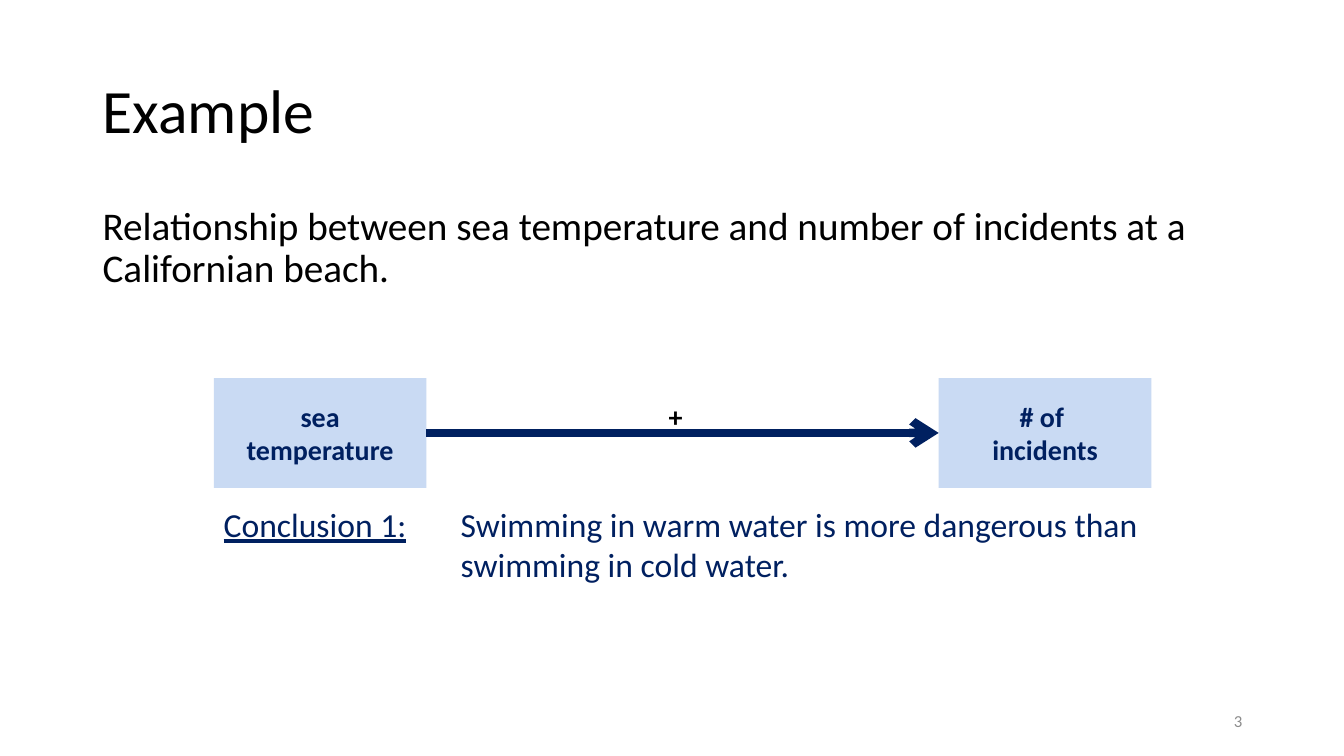
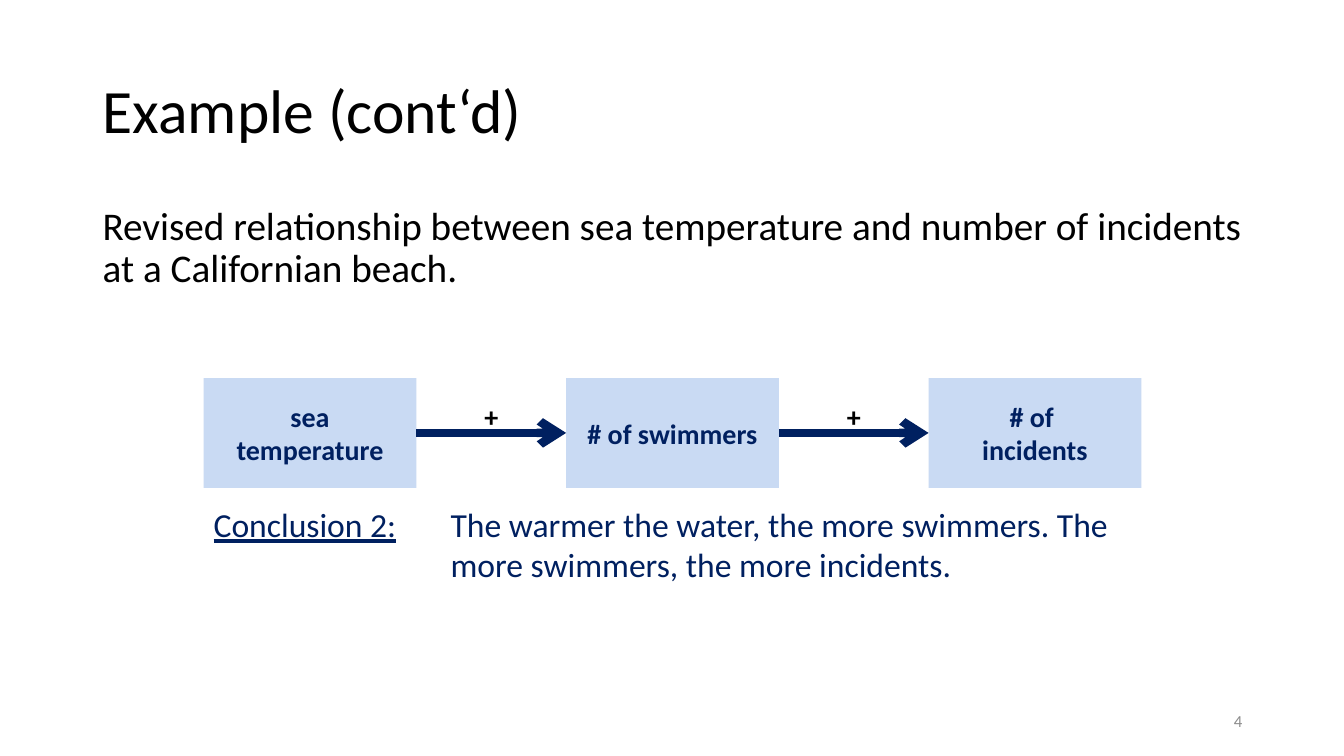
from dataclasses import dataclass
from typing import Any

from lxml import etree
from pptx import Presentation
from pptx.dml.color import RGBColor
from pptx.enum.shapes import MSO_CONNECTOR, MSO_SHAPE
from pptx.enum.text import MSO_ANCHOR, PP_ALIGN
from pptx.oxml.ns import qn
from pptx.slide import Slide
from pptx.text.text import TextFrame
from pptx.util import Inches, Pt

BLACK = RGBColor(0x00, 0x00, 0x00)
NAVY = RGBColor(0x00, 0x20, 0x60)
PALE_BLUE = RGBColor(0xC9, 0xDA, 0xF3)
GREY = RGBColor(0x8C, 0x8C, 0x8C)

BOX_TOP, BOX_WIDTH, BOX_HEIGHT = 3.75, 2.11, 1.09
CHAIN_SPAN = 7.19
SIGN_TOP, SIGN_WIDTH, SIGN_HEIGHT = 3.91, 1.02, 0.44
CONCLUSION_INDENT = 2.35


@dataclass(frozen=True)
class TextStyle:
    font: dict[str, Any]
    color: RGBColor
    paragraph: dict[str, Any]
    anchor: MSO_ANCHOR = MSO_ANCHOR.TOP


@dataclass(frozen=True)
class Area:
    left: float
    top: float
    width: float
    height: float

    def lengths(self) -> list[int]:
        return [Inches(value) for value in (self.left, self.top, self.width, self.height)]


@dataclass(frozen=True)
class Example:
    title: str
    introduction: str
    number: str
    chain_left: float
    factors: tuple[str, ...]
    conclusion_label: str
    conclusion: str
    sign_shift: float = 0


TITLE = TextStyle({"size": Pt(44)}, BLACK, {"line_spacing": 0.9}, MSO_ANCHOR.MIDDLE)
BODY = TextStyle({"size": Pt(28)}, BLACK, {"line_spacing": 0.9, "space_before": Pt(10)})
NUMBER = TextStyle({"size": Pt(12)}, GREY, {"alignment": PP_ALIGN.RIGHT}, MSO_ANCHOR.MIDDLE)
FACTOR = TextStyle({"size": Pt(20), "bold": True}, NAVY,
                   {"alignment": PP_ALIGN.CENTER}, MSO_ANCHOR.MIDDLE)
SIGN = TextStyle({"size": Pt(20), "bold": True}, BLACK, {"alignment": PP_ALIGN.CENTER})
CONCLUSION = TextStyle({"size": Pt(24)}, NAVY, {})

TITLE_AREA = Area(0.92, 0.4, 11.5, 1.45)
BODY_AREA = Area(0.92, 2, 11.5, 4.76)
NUMBER_AREA = Area(9.42, 6.95, 3, 0.4)

EXAMPLES = (
    Example(
        "Example",
        "Relationship between sea temperature and number of incidents at a Californian beach.",
        "3",
        2.12,
        ("sea\ntemperature", "# of \nincidents"),
        "Conclusion 1:",
        "Swimming in warm water is more dangerous than swimming in cold water.",
        -0.07,
    ),
    Example(
        "Example (cont‘d)",
        "Revised relationship between sea temperature and number of incidents "
        "at a Californian beach.",
        "4",
        2.02,
        ("sea\ntemperature", "# of swimmers", "# of \nincidents"),
        "Conclusion 2:",
        "The warmer the water, the more swimmers. The more swimmers, the more incidents.",
    ),
)


def set_values(target: Any, values: dict[str, Any]) -> None:
    for name, value in values.items():
        setattr(target, name, value)


def write_text(frame: TextFrame, text: str, style: TextStyle) -> None:
    set_values(frame, {"word_wrap": True, "vertical_anchor": style.anchor})
    paragraph = frame.paragraphs[0]
    paragraph.text = text
    set_values(paragraph, style.paragraph)
    for run in paragraph.runs:
        set_values(run.font, {"name": "Calibri", **style.font})
        run.font.color.rgb = style.color


def add_text(slide: Slide, area: Area, text: str, style: TextStyle) -> TextFrame:
    frame = slide.shapes.add_textbox(*area.lengths()).text_frame
    write_text(frame, text, style)
    return frame


def add_factor(slide: Slide, left: float, text: str) -> None:
    area = Area(left, BOX_TOP, BOX_WIDTH, BOX_HEIGHT)
    shape = slide.shapes.add_shape(MSO_SHAPE.RECTANGLE, *area.lengths())
    shape.shadow.inherit = False
    shape.fill.solid()
    shape.fill.fore_color.rgb = PALE_BLUE
    shape.line.fill.background()
    write_text(shape.text_frame, text, FACTOR)


def add_arrow(slide: Slide, start: float, end: float) -> None:
    middle = Inches(BOX_TOP + BOX_HEIGHT / 2)
    connector = slide.shapes.add_connector(
        MSO_CONNECTOR.STRAIGHT, Inches(start), middle, Inches(end), middle)
    connector.line.width = Pt(6)
    connector.line.color.rgb = NAVY
    properties = connector.element.spPr
    etree.SubElement(properties.find(qn("a:ln")), qn("a:tailEnd"), type="arrow")
    etree.SubElement(properties, qn("a:effectLst"))


def add_chain(slide: Slide, example: Example) -> None:
    pitch = CHAIN_SPAN / (len(example.factors) - 1)
    for index, factor in enumerate(example.factors):
        left = example.chain_left + index * pitch
        add_factor(slide, left, factor)
        if index:
            start = left - pitch + BOX_WIDTH
            add_arrow(slide, start, left)
            sign_left = (start + left - SIGN_WIDTH) / 2 + example.sign_shift
            add_text(slide, Area(sign_left, SIGN_TOP, SIGN_WIDTH, SIGN_HEIGHT), "+", SIGN)


def add_conclusion(slide: Slide, example: Example) -> None:
    area = Area(example.chain_left, 4.95, 9.45, 0.91)
    frame = add_text(slide, area, example.conclusion_label, CONCLUSION)
    paragraph = frame.paragraphs[0]
    paragraph.runs[0].font.underline = True
    run = paragraph.add_run()
    run.text = f"\t{example.conclusion}"
    set_values(run.font, {"name": "Calibri", **CONCLUSION.font})
    run.font.color.rgb = CONCLUSION.color
    indent = Inches(CONCLUSION_INDENT)
    properties = paragraph._p.get_or_add_pPr()
    properties.set("marL", str(indent))
    properties.set("indent", str(-indent))
    tabs = etree.SubElement(properties, qn("a:tabLst"))
    etree.SubElement(tabs, qn("a:tab"), pos=str(indent), algn="l")


def add_example(presentation: Any, example: Example) -> None:
    slide = presentation.slides.add_slide(presentation.slide_layouts[6])
    add_text(slide, TITLE_AREA, example.title, TITLE)
    add_text(slide, BODY_AREA, example.introduction, BODY)
    add_text(slide, NUMBER_AREA, example.number, NUMBER)
    add_chain(slide, example)
    add_conclusion(slide, example)


def main() -> None:
    presentation = Presentation()
    set_values(presentation, {"slide_width": Inches(13.33), "slide_height": Inches(7.5)})
    for example in EXAMPLES:
        add_example(presentation, example)
    presentation.save("out.pptx")


if __name__ == "__main__":
    main()
